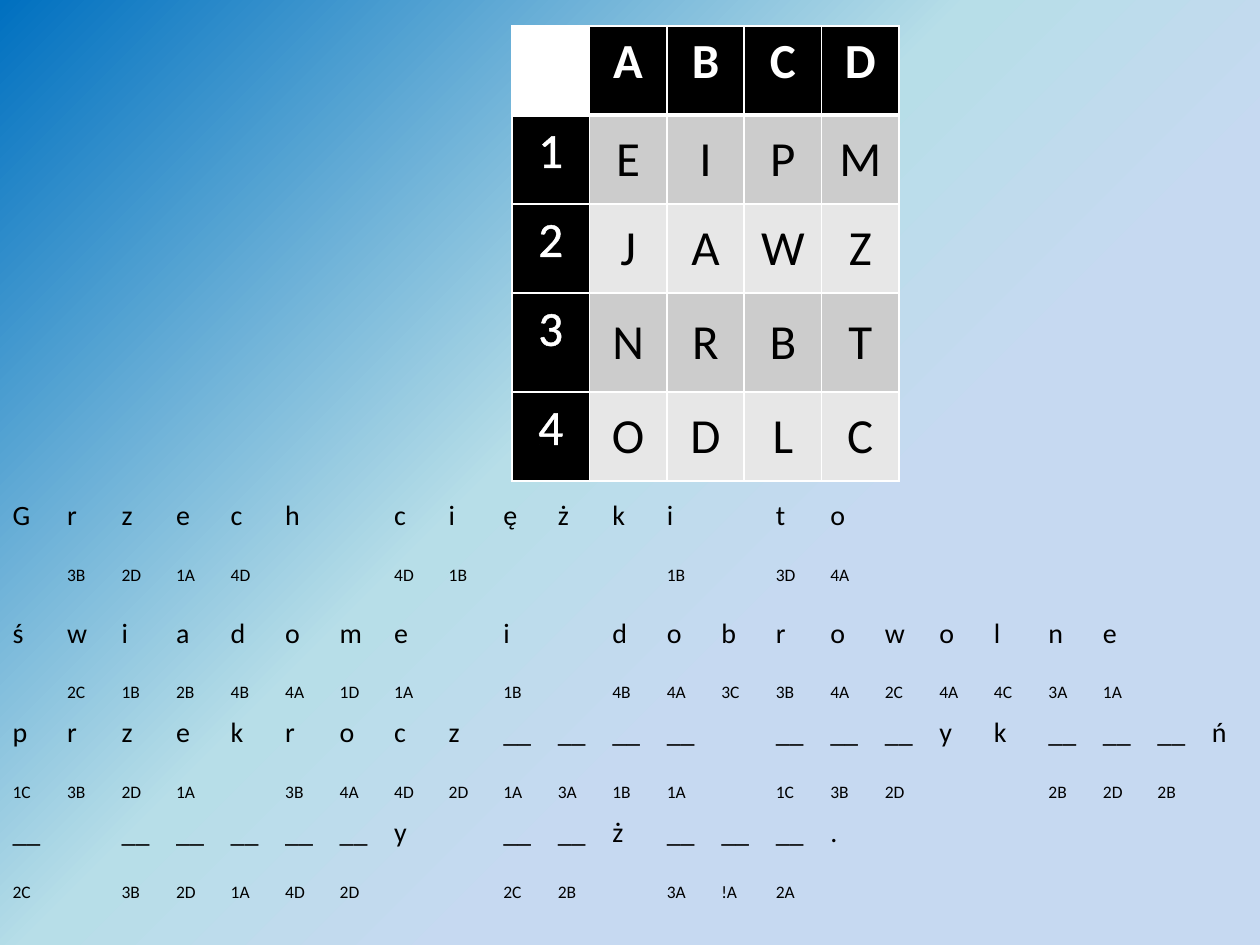
import copy
import itertools

import pptx
import pptx.dml.color
import pptx.enum.text
import pptx.oxml
import pptx.oxml.ns
import pptx.util

PX = 914400 // 126
NO_STYLE = "{2D5ABB26-0587-4C30-8999-92F81FD0307C}"
NS = pptx.oxml.ns.nsdecls("a")
THEME = {
    "font": "Calibri",
    "ink": "000000",
    "paper": "FFFFFF",
    "bands": ("CCCCCC", "E7E7E7"),
    "sky": ((0, "0070C0"), (0.44, "B7DEE8"), (0.64, "C6D9F1"), (1, "C6D9F1")),
    "key": 28,
    "letter": 16,
    "code": 10,
}
KEY = [" ABCD", "1EIPM", "2JAWZ", "3NRBT", "4ODLC"]
# One character per cell; "_" is a gap to fill in and "-" a cell without code.
PHRASE = [
    ("Grzech ciężki to", "- 3B 2D 1A 4D - - 4D 1B - - - 1B - 3D 4A"),
    ("świadome i dobrowolne",
     "- 2C 1B 2B 4B 4A 1D 1A - 1B - 4B 4A 3C 3B 4A 2C 4A 4C 3A 1A"),
    ("przekrocz____ ___yk___ń",
     "1C 3B 2D 1A - 3B 4A 4D 2D 1A 3A 1B 1A - 1C 3B 2D - - 2B 2D 2B"),
    ("_ _____y __ż___.", "2C - 3B 2D 1A 4D 2D - - 2C 2B - 3A !A 2A"),
]


def add_grid(s, left, top, width, heights, n_cols):
    """Add an unstyled table with equal columns and the given row heights."""
    sp = s.shapes.add_table(len(heights), n_cols, left * PX, top * PX,
                            width * PX, sum(heights) * PX)
    table = sp.table
    table._tbl.tblPr[0].text = NO_STYLE
    table.first_row = table.horz_banding = False
    for col in table.columns:
        col.width = width * PX // n_cols
    for row, height in zip(table.rows, heights):
        row.height = height * PX
    return table


def write(cell, text, size, color, **formats):
    r = cell.text_frame.paragraphs[0].add_run()
    r.text = text
    formats.update(name=THEME["font"], size=pptx.util.Pt(size))
    for name, value in formats.items():
        setattr(r.font, name, value)
    r.font.color.rgb = pptx.dml.color.RGBColor.from_string(color)
    return r


prs = pptx.Presentation()
prs.slide_width, prs.slide_height = 1260 * PX, 945 * PX
s = prs.slides.add_slide(prs.slide_layouts[6])

# Background
fill = s.background.fill
fill.gradient()
fill.gradient_angle = 315
stops = s._element.find(".//" + pptx.oxml.ns.qn("a:gsLst"))
while len(stops) < len(THEME["sky"]):
    stops.append(copy.deepcopy(stops[0]))
for stop, (position, color) in zip(fill.gradient_stops, THEME["sky"]):
    stop.position = position
    stop.color.rgb = pptx.dml.color.RGBColor.from_string(color)

# Phrase: rows of letters alternate with rows of codes
phrase = add_grid(s, 0, 493, 1255, [66, 30] * len(PHRASE), 23)
for i, (letters, codes) in enumerate(PHRASE):
    for j, char in enumerate(letters):
        if char != " ":
            write(phrase.cell(2 * i, j), char.replace("_", "__"),
                  THEME["letter"], THEME["ink"])
    for j, code in itertools.zip_longest(range(23), codes.split(), fillvalue="-"):
        cell = phrase.cell(2 * i + 1, j)
        if code != "-":
            write(cell, code, THEME["code"], THEME["ink"])
        elif i > 0:  # empty cells of the first code row keep the taller default
            cell.text_frame.paragraphs[0]._p.append(pptx.oxml.parse_xml(
                f'<a:endParaRPr {NS} sz="{THEME["code"] * 100}"/>'))

# Key: letters found by row number and column letter
key = add_grid(s, 512, 26, 387, [89, 89, 89, 99, 89], 5)
white = f'<a:solidFill><a:srgbClr val="{THEME["paper"]}"/></a:solidFill>'
for i, j in itertools.product(range(5), repeat=2):
    cell = key.cell(i, j)
    heavy = {"B": i == 0, "T": i == 1}
    for side in "LRTB":
        width = pptx.util.Pt(3 if heavy.get(side) else 1)
        cell._tc.get_or_add_tcPr().append(pptx.oxml.parse_xml(
            f'<a:ln{side} {NS} w="{width}">{white}</a:ln{side}>'))
    is_head = i == 0 or j == 0
    if i == j == 0:
        back = THEME["paper"]
    else:
        back = THEME["ink"] if is_head else THEME["bands"][(i - 1) % 2]
    cell.fill.solid()
    cell.fill.fore_color.rgb = pptx.dml.color.RGBColor.from_string(back)
    if i == j == 0:
        continue
    r = write(cell, KEY[i][j], THEME["key"],
              THEME["paper"] if is_head else THEME["ink"], bold=i == 0)
    cell.text_frame.paragraphs[0].alignment = pptx.enum.text.PP_ALIGN.CENTER
    if not is_head:
        cell.vertical_anchor = pptx.enum.text.MSO_ANCHOR.MIDDLE
    elif j == 0:
        r.font._element.insert(0, pptx.oxml.parse_xml(
            f'<a:ln {NS} w="{pptx.util.Pt(0.75)}">{white}</a:ln>'))

prs.save("out.pptx")
